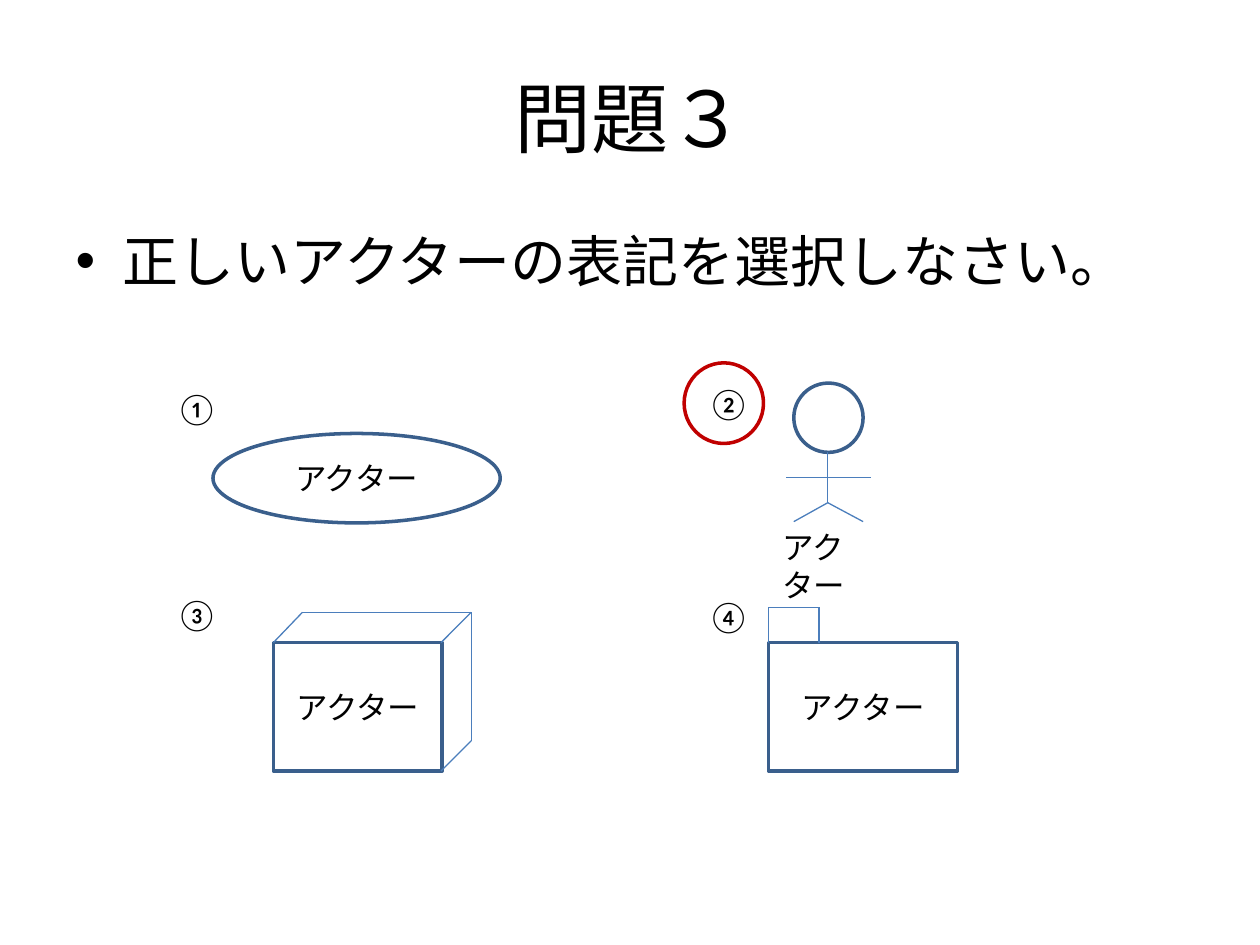
from itertools import pairwise

from lxml.etree import SubElement
from pptx import Presentation
from pptx.dml.color import RGBColor
from pptx.enum.shapes import MSO_CONNECTOR as Connector, MSO_SHAPE as Shape
from pptx.enum.text import MSO_ANCHOR as Anchor, MSO_AUTO_SIZE as AutoSize, PP_ALIGN as Align
from pptx.oxml.ns import qn
from pptx.util import Inches, Pt

THEME = {
    "font": "Calibri",
    "text": "000000", "outline": "3A5F8C", "stroke": "4B7EBC", "answer": "C00000",
    "title_size": 44, "body_size": 32, "label_size": 18,
    "outline_width": 2, "stroke_width": 0.75,
}

TITLE = "問題３"
QUESTION = "正しいアクターの表記を選択しなさい。"
ACTOR = "アクター"

OUTLINES = [
    (Shape.OVAL, (1.69, 3.44, 2.28, 0.71), ACTOR),
    (Shape.RECTANGLE, (2.17, 5.1, 1.34, 1.02), ACTOR),
    (Shape.RECTANGLE, (6.1, 5.1, 1.5, 1.02), ACTOR),
    (Shape.OVAL, (6.3, 3.04, 0.55, 0.55), ""),
]
ANSWER_RING = (5.43, 2.88, 0.63, 0.64)

STROKES = {
    "cube edges": [(2.17, 5.1), (2.4, 4.86), (3.74, 4.86), (3.74, 5.88), (3.5, 6.12)],
    "cube corner": [(3.74, 4.86), (3.5, 5.1)],
    "package tab": [(6.1, 5.1), (6.1, 4.82), (6.5, 4.82), (6.5, 5.1)],
    "body and right leg": [(6.57, 3.59), (6.57, 3.99), (6.85, 4.14)],
    "left leg": [(6.57, 3.99), (6.3, 4.14)],
    "arms": [(6.24, 3.79), (6.91, 3.79)],
}

LABELS = [
    (ACTOR, (6.11, 4.14, 1.07, 0.4), True),
    ("①", (1.3, 3.04, 0.45, 0.4), False),
    ("②", (5.52, 3, 0.45, 0.4), False),
    ("③", (1.3, 4.67, 0.45, 0.4), False),
    ("④", (5.52, 4.69, 0.45, 0.4), False),
]


def color(name):
    return RGBColor.from_string(THEME[name])


def inches(values):
    return [Inches(value) for value in values]


def write(box, text, size, align):
    para = box.text_frame.paragraphs[0]
    para.alignment = align
    span = para.add_run()
    span.text = text
    span.font.name = THEME["font"]
    span.font.size = Pt(THEME[size])
    span.font.color.rgb = color("text")
    return para


def fill_placeholder(box, area, text, size, align):
    box.left, box.top, box.width, box.height = inches(area)
    return write(box, text, size, align)


def add_outline(page, kind, area, text="", line="outline"):
    box = page.shapes.add_shape(kind, *inches(area))
    box.shadow.inherit = False
    box.fill.background()
    box.line.color.rgb = color(line)
    box.line.width = Pt(THEME["outline_width"])
    box.text_frame.vertical_anchor = Anchor.MIDDLE
    if text:
        write(box, text, "label_size", Align.CENTER)


def add_stroke(page, start, end):
    line = page.shapes.add_connector(Connector.STRAIGHT, *inches(start + end))
    line.line.color.rgb = color("stroke")
    line.line.width = Pt(THEME["stroke_width"])
    SubElement(line._element.spPr, qn("a:effectLst"))


def add_label(page, text, area, wrap):
    box = page.shapes.add_textbox(*inches(area))
    box.text_frame.word_wrap = wrap
    box.text_frame.auto_size = AutoSize.SHAPE_TO_FIT_TEXT
    write(box, text, "label_size", Align.LEFT)


def main():
    deck = Presentation()
    deck.slide_width, deck.slide_height = Inches(10), Inches(7.5)
    page = deck.slides.add_slide(deck.slide_layouts[1])
    title, body = page.placeholders
    fill_placeholder(title, (0.5, 0.3, 9, 1.25), TITLE, "title_size", Align.CENTER)
    fill_placeholder(body, (0.5, 1.75, 9, 4.95), QUESTION, "body_size", Align.LEFT)

    for kind, area, text in OUTLINES:
        add_outline(page, kind, area, text)
    for points in STROKES.values():
        for start, end in pairwise(points):
            add_stroke(page, start, end)
    for text, area, wrap in LABELS:
        add_label(page, text, area, wrap)
    add_outline(page, Shape.OVAL, ANSWER_RING, line="answer")
    deck.save("out.pptx")


if __name__ == "__main__":
    main()
